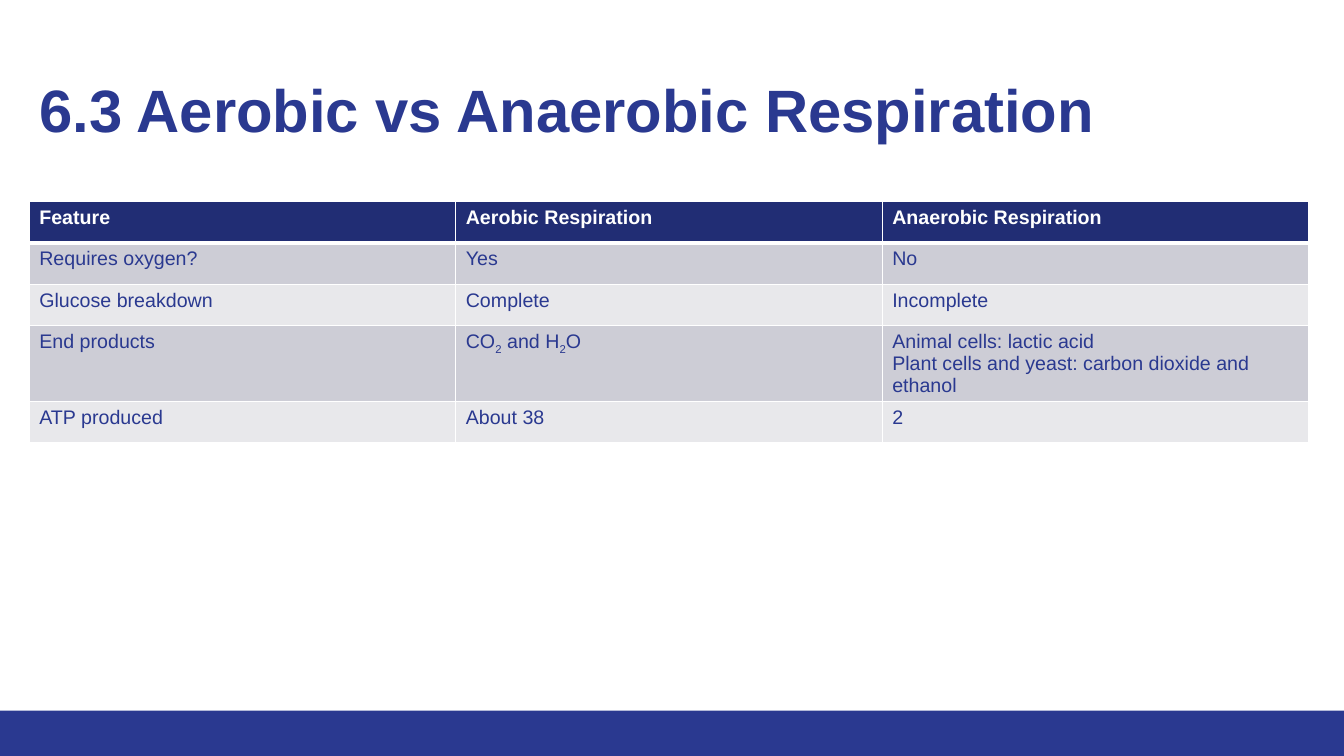
from dataclasses import dataclass

from lxml.etree import SubElement
from pptx import Presentation
from pptx.dml.color import RGBColor
from pptx.enum.shapes import MSO_SHAPE
from pptx.enum.text import MSO_ANCHOR, PP_ALIGN
from pptx.oxml.ns import qn
from pptx.slide import Slide
from pptx.table import _Cell
from pptx.text.text import _Paragraph
from pptx.util import Inches, Pt

INDIGO = RGBColor(0x2A, 0x39, 0x90)
NAVY = RGBColor(0x21, 0x2D, 0x74)
DARK_BAND = RGBColor(0xCD, 0xCD, 0xD6)
LIGHT_BAND = RGBColor(0xE8, 0xE8, 0xEB)
WHITE = RGBColor(0xFF, 0xFF, 0xFF)

FONT = "Arial"
PAGE_WIDTH, PAGE_HEIGHT = Inches(13.33), Inches(7.5)
MARGIN = Inches(0.29)
COLUMN_WIDTH, ROW_HEIGHT = Inches(4.23), Inches(0.41)
CONTENT_WIDTH = 3 * COLUMN_WIDTH
FOOTER_SHARE = 0.06


@dataclass(frozen=True)
class TextStyle:
    """Size, colour and weight of a run."""

    size: float
    color: RGBColor
    bold: bool = False


@dataclass(frozen=True)
class Feature:
    """One table row; each cell lists paragraphs, with _ around subscripts."""

    name: str
    aerobic: str
    anaerobic: str


TITLE_STYLE = TextStyle(42.7, INDIGO, True)
HEADER_STYLE = TextStyle(14, WHITE, True)
BODY_STYLE = TextStyle(14, INDIGO)

FEATURES = [
    Feature("Feature", "Aerobic Respiration", "Anaerobic Respiration"),
    Feature("Requires oxygen?", "Yes", "No"),
    Feature("Glucose breakdown", "Complete", "Incomplete"),
    Feature("End products", "CO_2_ and H_2_O",
            "Animal cells: lactic acid\nPlant cells and yeast: carbon dioxide and ethanol"),
    Feature("ATP produced", "About 38", "2"),
]


def add_runs(para: _Paragraph, text: str, style: TextStyle) -> None:
    """Add text run by run, lowering the parts between underscores."""
    for index, part in enumerate(text.split("_")):
        span = para.add_run()
        span.text = part
        span.font.name = FONT
        span.font.size = Pt(style.size)
        span.font.bold = style.bold
        span.font.color.rgb = style.color
        if index % 2:
            span._r.get_or_add_rPr().set("baseline", "-25000")


def set_borders(cell: _Cell, top: float, bottom: float) -> None:
    """Draw white lines on the four sides of a cell."""
    properties = cell._tc.get_or_add_tcPr()
    widths = {"a:lnL": 1, "a:lnR": 1, "a:lnT": top, "a:lnB": bottom}
    for index, (side, width) in enumerate(widths.items()):
        line = SubElement(properties, qn(side), w=str(Pt(width)))
        fill = SubElement(line, qn("a:solidFill"))
        SubElement(fill, qn("a:srgbClr"), val=str(WHITE))
        properties.insert(index, line)


def add_footer(page: Slide) -> None:
    """Add the coloured band along the bottom."""
    height = int(PAGE_HEIGHT * FOOTER_SHARE)
    band = page.shapes.add_shape(
        MSO_SHAPE.RECTANGLE, 0, PAGE_HEIGHT - height, PAGE_WIDTH, height)
    band.shadow.inherit = False
    band.fill.solid()
    band.fill.fore_color.rgb = INDIGO
    band.line.fill.background()


def format_title(page: Slide, text: str) -> None:
    """Place and fill the title placeholder."""
    title = page.shapes.title
    title.left, title.top = MARGIN, Inches(0.4)
    title.width, title.height = CONTENT_WIDTH, Inches(1.45)
    title.text_frame.word_wrap = True
    title.text_frame.vertical_anchor = MSO_ANCHOR.MIDDLE
    para = title.text_frame.paragraphs[0]
    para.alignment = PP_ALIGN.LEFT
    para.line_spacing = 0.9
    add_runs(para, text, TITLE_STYLE)


def fill_cell(cell: _Cell, text: str, row: int) -> None:
    """Write and format one cell according to its row."""
    style = BODY_STYLE if row else HEADER_STYLE
    frame = cell.text_frame
    for index, line in enumerate(text.split("\n")):
        para = frame.add_paragraph() if index else frame.paragraphs[0]
        add_runs(para, line, style)
    cell.fill.solid()
    band = DARK_BAND if row % 2 else LIGHT_BAND
    cell.fill.fore_color.rgb = band if row else NAVY
    set_borders(cell, top=3 if row == 1 else 1, bottom=1 if row else 3)


def add_comparison(page: Slide) -> None:
    """Add the table of features."""
    table = page.shapes.add_table(
        len(FEATURES), 3, MARGIN, Inches(2), CONTENT_WIDTH,
        ROW_HEIGHT * len(FEATURES)).table
    for row, feature in enumerate(FEATURES):
        texts = (feature.name, feature.aerobic, feature.anaerobic)
        for column, text in enumerate(texts):
            fill_cell(table.cell(row, column), text, row)


def main() -> None:
    """Build and save the deck."""
    deck = Presentation()
    deck.slide_width, deck.slide_height = PAGE_WIDTH, PAGE_HEIGHT
    page = deck.slides.add_slide(deck.slide_layouts[5])
    add_footer(page)
    format_title(page, "6.3 Aerobic vs Anaerobic Respiration")
    add_comparison(page)
    deck.save("out.pptx")


if __name__ == "__main__":
    main()
